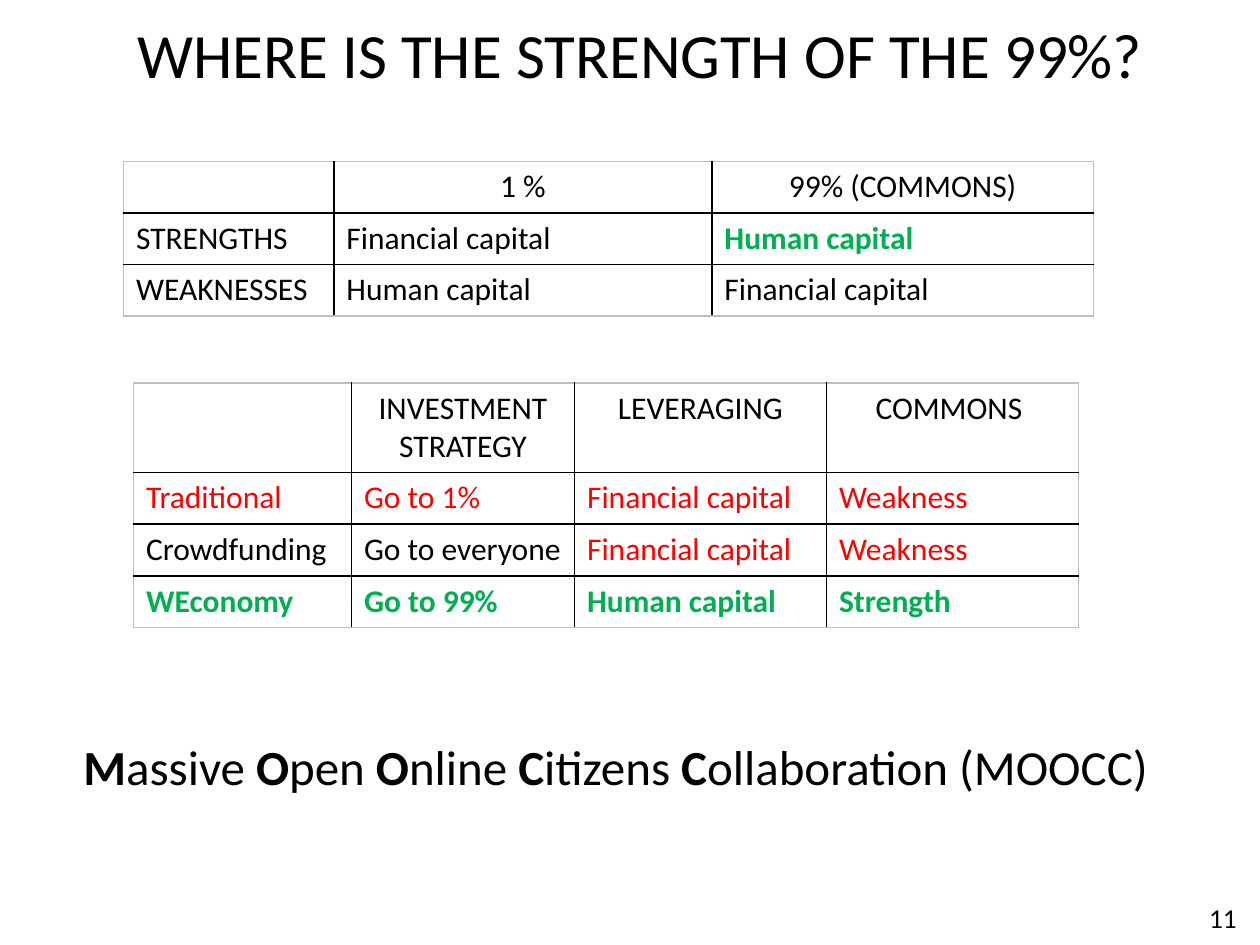
"""Build the slide on the strength of the 99%: two tables, a title and a closing line."""
from lxml import etree
from pptx import Presentation
from pptx.dml.color import RGBColor
from pptx.enum.text import MSO_ANCHOR, PP_ALIGN
from pptx.oxml.ns import qn
from pptx.util import Inches, Pt

CENTER, LEFT = PP_ALIGN.CENTER, PP_ALIGN.LEFT
MIDDLE, TOP = MSO_ANCHOR.MIDDLE, MSO_ANCHOR.TOP
FONT = "Calibri"
COLORS = {"plain": "000000", "weak": "FF0000", "strong": "00B050",
          "inner": "000000", "outer": "BFBFBF"}
SLIDE_W, SLIDE_H = 10, 7.5
ROW_H = 0.41
BORDER_W = Pt(1)

TABLES = [
    {
        "origin": (0.98, 1.28),
        "columns": [1.67, 3, 3.03],
        "header_h": ROW_H,
        "header": ["", "1 %", "99% (COMMONS)"],
        "body": [
            [("STRENGTHS", "plain"), ("Financial capital", "plain"), ("Human capital", "strong")],
            [("WEAKNESSES", "plain"), ("Human capital", "plain"), ("Financial capital", "plain")],
        ],
    },
    {
        "origin": (1.06, 3.04),
        "columns": [1.73, 1.77, 2, 2],
        "header_h": 0.71,
        "header": ["", "INVESTMENT STRATEGY", "LEVERAGING", "COMMONS "],
        "body": [
            [("Traditional", "weak"), ("Go to 1%", "weak"),
             ("Financial capital", "weak"), ("Weakness", "weak")],
            [("Crowdfunding", "plain"), ("Go to everyone", "plain"),
             ("Financial capital", "weak"), ("Weakness", "weak")],
            [("WEconomy", "strong"), ("Go to 99%", "strong"),
             ("Human capital", "strong"), ("Strength", "strong")],
        ],
    },
]

MOOCC_WORDS = ["Massive ", "Open ", "Online ", "Citizens ", "Collaboration (MOOCC)"]
MOOCC_RUNS = [run for word in MOOCC_WORDS for run in ((word[0], True), (word[1:], False))]

LINES = [
    ((0.83, 0, 8.5, 0.84), 36, MIDDLE, [("WHERE IS THE STRENGTH OF THE 99%?", False)]),
    ((0.12, 5.8, 9.53, 0.57), 28, TOP, MOOCC_RUNS),
    ((9.41, 7.06, 0.59, 0.44), 15.6, MIDDLE, [("11", False)]),
]


def add_run(paragraph, text, size, color="plain", bold=False):
    run = paragraph.add_run()
    run.text = text
    run.font.name = FONT
    run.font.size = Pt(size)
    run.font.bold = bold
    run.font.color.rgb = RGBColor.from_string(COLORS[color])


def set_borders(cell, edges):
    properties = cell._tc.get_or_add_tcPr()
    for position, (side, color) in enumerate(edges.items()):
        border = etree.Element(qn(f"a:ln{side}"), w=str(BORDER_W))
        fill = etree.SubElement(border, qn("a:solidFill"))
        etree.SubElement(fill, qn("a:srgbClr"), val=COLORS[color])
        properties.insert(position, border)


def add_grid(slide, content):
    rows = [[(text, "plain") for text in content["header"]]] + content["body"]
    widths = content["columns"]
    heights = [content["header_h"]] + [ROW_H] * len(content["body"])
    left, top = content["origin"]
    table = slide.shapes.add_table(
        len(rows), len(widths), Inches(left), Inches(top),
        Inches(sum(widths)), Inches(sum(heights))).table
    table.first_row = table.horz_banding = False
    for column, width in zip(table.columns, widths):
        column.width = Inches(width)
    for r, (row, height) in enumerate(zip(rows, heights)):
        table.rows[r].height = Inches(height)
        for c, (text, color) in enumerate(row):
            cell = table.cell(r, c)
            cell.fill.background()
            set_borders(cell, {
                "L": "inner" if c else "outer",
                "R": "inner" if c < len(widths) - 1 else "outer",
                "T": "inner" if r else "outer",
                "B": "inner" if r < len(rows) - 1 else "outer",
            })
            paragraph = cell.text_frame.paragraphs[0]
            paragraph.alignment = LEFT if r else CENTER
            if text:
                add_run(paragraph, text, 18, color, color == "strong")


def add_line(slide, box, size, anchor, runs):
    frame = slide.shapes.add_textbox(*map(Inches, box)).text_frame
    frame.word_wrap = True
    frame.vertical_anchor = anchor
    paragraph = frame.paragraphs[0]
    paragraph.alignment = CENTER
    for text, bold in runs:
        add_run(paragraph, text, size, bold=bold)


def main():
    deck = Presentation()
    deck.slide_width, deck.slide_height = Inches(SLIDE_W), Inches(SLIDE_H)
    slide = deck.slides.add_slide(deck.slide_layouts[6])
    for content in TABLES:
        add_grid(slide, content)
    for line in LINES:
        add_line(slide, *line)
    deck.save("out.pptx")


if __name__ == "__main__":
    main()
